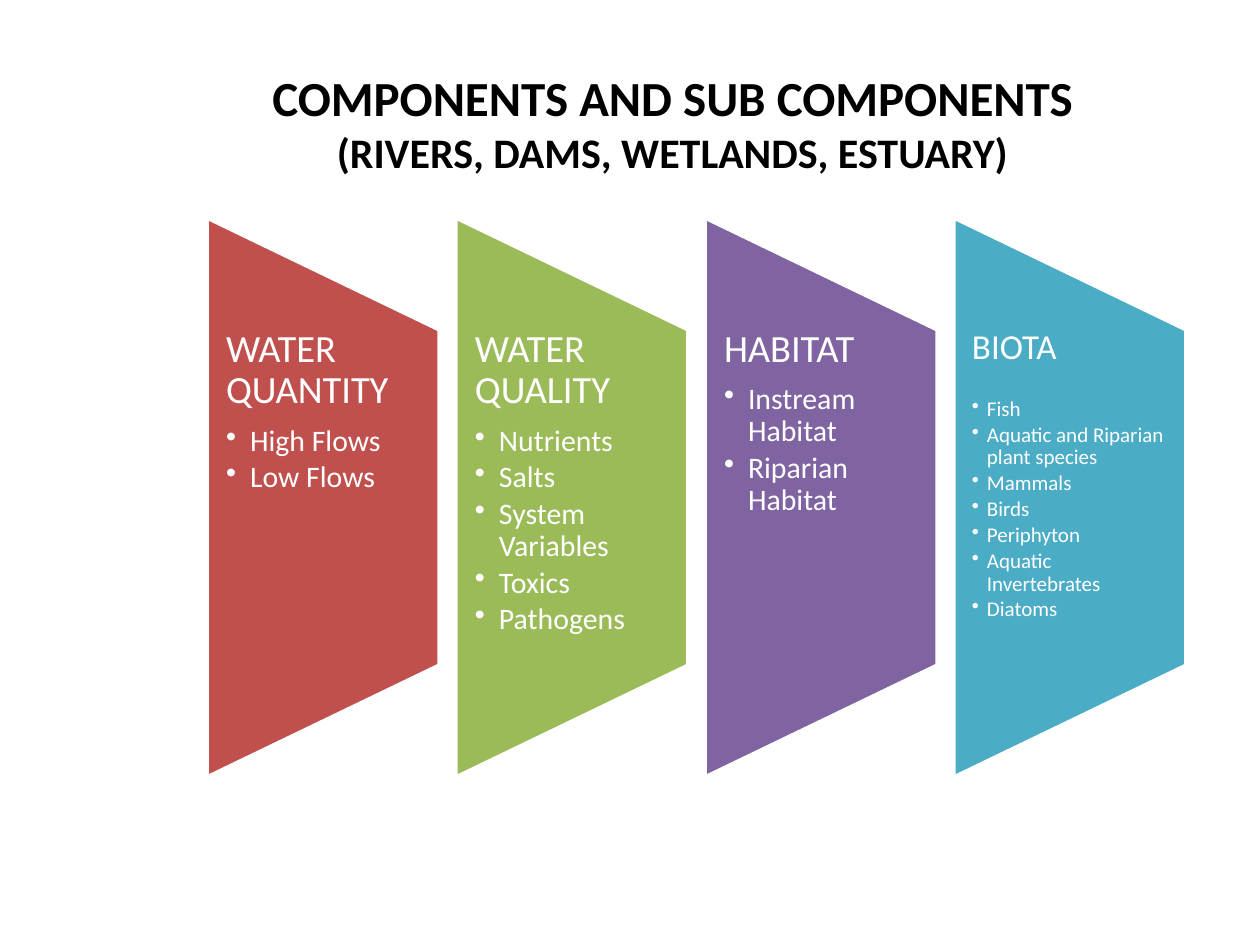
from lxml.etree import SubElement
from pptx import Presentation
from pptx.dml.color import RGBColor
from pptx.enum.shapes import MSO_SHAPE
from pptx.enum.text import MSO_ANCHOR, PP_ALIGN
from pptx.oxml.ns import qn
from pptx.util import Emu, Inches, Pt

BLACK = RGBColor(0x00, 0x00, 0x00)
WHITE = RGBColor(0xFF, 0xFF, 0xFF)
RED = RGBColor(0xC0, 0x50, 0x4D)
GREEN = RGBColor(0x9B, 0xBB, 0x59)
PURPLE = RGBColor(0x80, 0x64, 0xA2)
TEAL = RGBColor(0x4B, 0xAC, 0xC6)


def px(n):
    return Emu(round(n * 914400 / 126))


def write(p, text, size, color, font="Calibri", bold=False, align=PP_ALIGN.LEFT,
          line=1.0, after=0, indent=0):
    """Fill one paragraph; an indent makes it a bullet."""
    p.alignment = align
    p.line_spacing = line
    p.space_after = Pt(after)
    if indent:
        p.level = 1
        pPr = p._p.get_or_add_pPr()
        pPr.set("marL", str(px(indent)))
        pPr.set("indent", str(-px(indent)))
        SubElement(pPr, qn("a:buChar")).set("char", "•")
    r = p.add_run()
    r.text = text
    r.font.name = font
    r.font.size = Pt(size)
    r.font.bold = bold
    r.font.color.rgb = color


class Slide:
    font = "Calibri"

    def __init__(self, prs):
        self.s = prs.slides.add_slide(prs.slide_layouts[6])

    def text(self, x, y, w, h, paragraphs, inset=(13, 6)):
        tf = self.s.shapes.add_textbox(px(x), px(y), px(w), px(h)).text_frame
        tf.word_wrap = True
        tf.vertical_anchor = MSO_ANCHOR.TOP
        tf.margin_left = tf.margin_right = px(inset[0])
        tf.margin_top = tf.margin_bottom = px(inset[1])
        for i, (text, style) in enumerate(paragraphs):
            p = tf.add_paragraph() if i else tf.paragraphs[0]
            write(p, text, font=self.font, **style)

    def panel(self, x, y, w, h, color):
        """Trapezoid turned on its side, filling the box x, y, w, h."""
        sp = self.s.shapes.add_shape(
            MSO_SHAPE.FLOWCHART_MANUAL_OPERATION,
            px(x + (w - h) / 2), px(y + (h - w) / 2), px(h), px(w))
        sp.rotation = 270
        sp.shadow.inherit = False
        sp.fill.solid()
        sp.fill.fore_color.rgb = color
        sp.line.color.rgb = WHITE
        sp.line.width = Pt(2)

    def component(self, x, color, heading, items, head_size=22, item_size=17,
                  gap=7.7, indent=24, inset=19):
        self.panel(x, 218, 232, 559, color)
        head = dict(size=head_size, color=WHITE, line=0.9, after=gap)
        bullet = dict(size=item_size, color=WHITE, line=0.9,
                      after=round(item_size * 0.15, 2), indent=indent)
        self.text(x, 329, 232, 336,
                  [(heading, head)] + [(item, bullet) for item in items],
                  inset=(inset, 0))


def main():
    prs = Presentation()
    prs.slide_width, prs.slide_height = Inches(10), Inches(7.5)
    slide = Slide(prs)

    # Title
    title = dict(color=BLACK, bold=True, align=PP_ALIGN.CENTER)
    slide.text(137, 62, 1071, 73, [
        ("COMPONENTS AND SUB COMPONENTS", dict(title, size=28)),
        ("(RIVERS, DAMS, WETLANDS, ESTUARY)", dict(title, size=24)),
    ])

    # Four component panels, evenly spaced
    compact = dict(head_size=20, item_size=12, gap=18, indent=15, inset=18)
    components = [
        (RED, "WATER QUANTITY", ["High Flows", "Low Flows"], {}),
        (GREEN, "WATER QUALITY",
         ["Nutrients", "Salts", "System Variables", "Toxics", "Pathogens"], {}),
        (PURPLE, "HABITAT", ["Instream Habitat", "Riparian Habitat"], {}),
        (TEAL, "BIOTA",
         ["Fish", "Aquatic and Riparian plant species", "Mammals", "Birds",
          "Periphyton", "Aquatic Invertebrates", "Diatoms"], compact),
    ]
    for i, (color, heading, items, sizes) in enumerate(components):
        slide.component(207 + 249 * i, color, heading, items, **sizes)

    prs.save("out.pptx")


if __name__ == "__main__":
    main()
